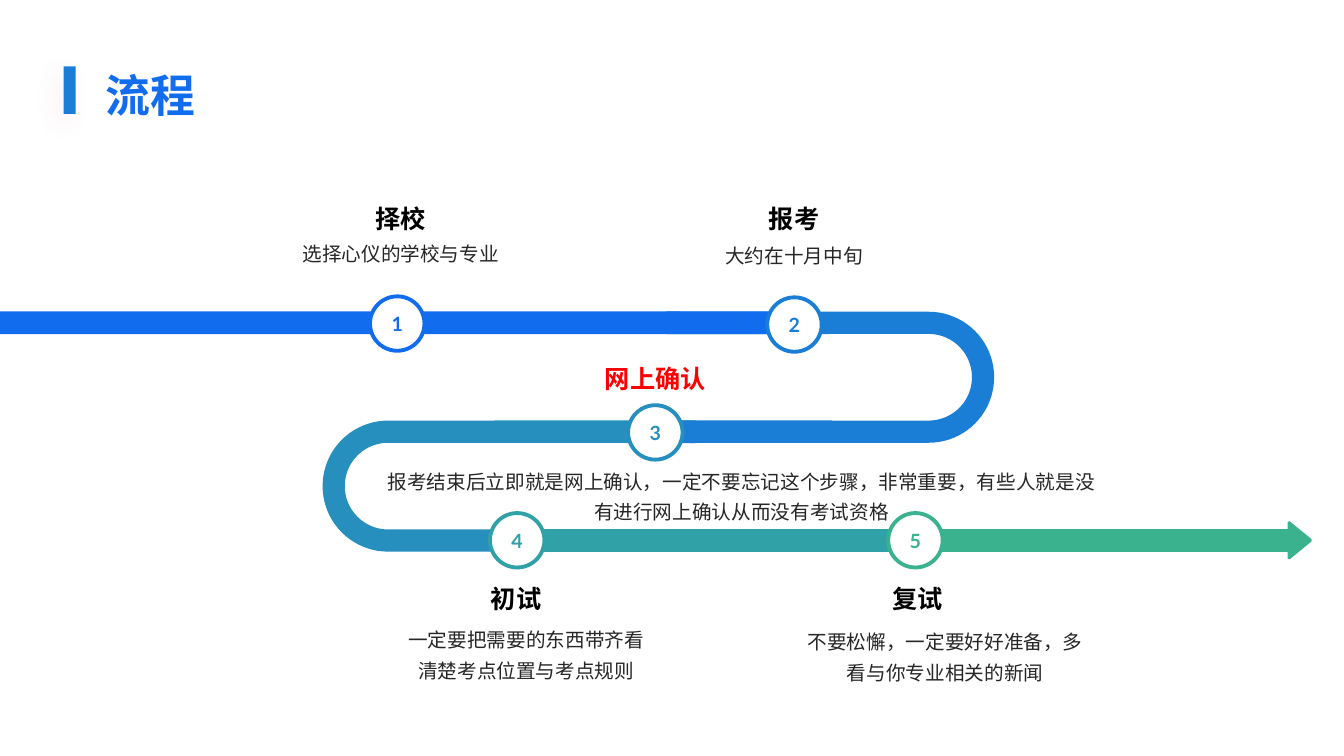
"""Builds a slide that shows an exam application process as a winding road."""
from math import cos, pi, sin

from lxml import etree
from pptx import Presentation
from pptx.dml.color import RGBColor
from pptx.enum.shapes import MSO_SHAPE
from pptx.enum.text import MSO_ANCHOR, PP_ALIGN
from pptx.oxml.ns import qn
from pptx.util import Inches, Pt

RECTANGLE, OVAL = MSO_SHAPE.RECTANGLE, MSO_SHAPE.OVAL
TOP, MIDDLE, BOTTOM = MSO_ANCHOR.TOP, MSO_ANCHOR.MIDDLE, MSO_ANCHOR.BOTTOM
LEFT, CENTER = PP_ALIGN.LEFT, PP_ALIGN.CENTER

BLUE = RGBColor(0x11, 0x6C, 0xEE)
AZURE = RGBColor(0x1B, 0x7E, 0xD6)
STEEL = RGBColor(0x26, 0x8F, 0xBE)
TEAL = RGBColor(0x30, 0xA1, 0xA6)
GREEN = RGBColor(0x3B, 0xB2, 0x8E)
PINK = RGBColor(0xFF, 0x5D, 0xA9)
RED = RGBColor(0xFF, 0x00, 0x00)
BLACK = RGBColor(0x00, 0x00, 0x00)
GRAY = RGBColor(0x26, 0x26, 0x26)
WHITE = RGBColor(0xFF, 0xFF, 0xFF)

FONT = "Lato"
ROAD = 0.225
LANES = (3.09, 4.17, 5.25)
OUTER, INNER = 0.65, 0.43
MARKER = 0.54

MARKERS = [
    (3.67, 2.94, BLUE),
    (7.61, 2.95, AZURE),
    (6.23, 4.02, STEEL),
    (4.86, 5.09, TEAL),
    (8.81, 5.09, GREEN),
]
HEADINGS = [
    ("择校", (2.83, 1.87, 2.29, 0.45), BLACK),
    ("报考", (6.73, 1.87, 2.29, 0.45), BLACK),
    ("网上确认", (5.5, 3.32, 2, 0.58), RED),
    ("初试", (4, 5.64, 2.24, 0.45), BLACK),
    ("复试", (7.98, 5.64, 2.24, 0.45), BLACK),
]
DETAILS = [
    ("选择心仪的学校与专业", (2.83, 2.33, 2.29, 0.6)),
    ("大约在十月中旬", (6.73, 2.35, 2.29, 0.6)),
    ("报考结束后立即就是网上确认，一定不要忘记这个步骤，非常重要，"
     "有些人就是没有进行网上确认从而没有考试资格", (3.77, 4.59, 7.17, 0.55)),
    ("一定要把需要的东西带齐看清楚考点位置与考点规则", (4, 6.16, 2.44, 0.6)),
    ("不要松懈，一定要好好准备，多看与你专业相关的新闻", (7.98, 6.18, 2.79, 0.6)),
]


def write(para, text, size, color, bold=False, align=CENTER):
    """Add one formatted run to a paragraph."""
    para.alignment = align
    span = para.add_run()
    span.text = text
    span.font.name = FONT
    span.font.size = Pt(size)
    span.font.bold = bold
    span.font.color.rgb = color


def paint(shape, color):
    """Give a shape a plain fill without line or shadow."""
    shape.shadow.inherit = False
    shape.fill.solid()
    shape.fill.fore_color.rgb = color
    shape.line.fill.background()


def add_block(page, left, top, width, height, color):
    """Add a filled rectangle."""
    block = page.shapes.add_shape(
        RECTANGLE, Inches(left), Inches(top), Inches(width), Inches(height))
    paint(block, color)
    return block


def add_outline(page, points, color):
    """Add a filled closed outline through points in inches."""
    corners = [(Inches(x), Inches(y)) for x, y in points]
    builder = page.shapes.build_freeform(*corners[0])
    builder.add_line_segments(corners[1:], close=True)
    paint(builder.convert_to_shape(), color)


def add_turn(page, lane, center_x, upper_end, lower_end, side, color):
    """Add a U-turn from one lane to the next; side is 1 for right, -1 for left."""
    top, bottom = LANES[lane], LANES[lane + 1] + ROAD
    center_y = (top + bottom) / 2
    angles = [pi * step / 40 - pi / 2 for step in range(41)]

    def arc(radius):
        return [(center_x + side * radius * cos(angle),
                 center_y + radius * sin(angle)) for angle in angles]

    points = [(upper_end, top), *arc(OUTER), (lower_end, bottom),
              (lower_end, bottom - ROAD), *reversed(arc(INNER)),
              (upper_end, top + ROAD)]
    add_outline(page, points, color)


def add_marker(page, number, left, top, color):
    """Add a numbered white circle with a coloured ring."""
    marker = page.shapes.add_shape(
        OVAL, Inches(left), Inches(top), Inches(MARKER), Inches(MARKER))
    paint(marker, WHITE)
    marker.line.color.rgb = color
    marker.line.width = Pt(2.75)
    frame = marker.text_frame
    frame.word_wrap = False
    frame.vertical_anchor = MIDDLE
    write(frame.paragraphs[0], str(number), 14, color, bold=True)


def add_label(page, area, anchor):
    """Add an empty wrapping text box without insets and return its paragraph."""
    frame = page.shapes.add_textbox(*map(Inches, area)).text_frame
    frame.word_wrap = True
    frame.vertical_anchor = anchor
    frame.margin_left = frame.margin_right = 0
    frame.margin_top = frame.margin_bottom = 0
    return frame.paragraphs[0]


def add_title(page, text):
    """Fill the title placeholder and set the accent bar with its soft shadow."""
    accent = add_block(page, 0.63, 0.66, 0.12, 0.47, AZURE)
    effects = accent.fill._xPr.find(qn("a:effectLst"))
    shadow = etree.SubElement(
        effects, qn("a:outerShdw"), blurRad=str(Pt(16)), dist=str(Pt(8)),
        dir=str(135 * 60000), rotWithShape="0")
    tint = etree.SubElement(shadow, qn("a:srgbClr"), val=str(PINK))
    etree.SubElement(tint, qn("a:alpha"), val="10000")

    title = page.shapes.title
    title.left, title.top = Inches(0.95), Inches(0.57)
    title.width, title.height = Inches(11.71), Inches(0.64)
    frame = title.text_frame
    frame.vertical_anchor = BOTTOM
    frame.margin_left = frame.margin_right = Inches(0.1)
    frame.margin_top = frame.margin_bottom = 0
    write(frame.paragraphs[0], text, 32, BLUE, bold=True, align=LEFT)


def add_road(page):
    """Draw the winding road from its end back to its start."""
    add_block(page, 9.22, LANES[2], 3.59, ROAD, GREEN)
    add_outline(page, [(12.77, 5.18), (12.79, 5.17), (13.01, 5.35),
                       (13.01, 5.37), (12.79, 5.55), (12.77, 5.54)], GREEN)
    add_turn(page, 1, 3.85, 6.9, 6.63, -1, STEEL)
    add_block(page, 5.39, LANES[2], 3.96, ROAD, TEAL)
    add_turn(page, 0, 9.21, 6.61, 6.44, 1, AZURE)
    add_block(page, 0, LANES[0], 7.88, ROAD, BLUE)


def main():
    """Build and save the slide."""
    deck = Presentation()
    deck.slide_width, deck.slide_height = Inches(13.33), Inches(7.5)
    page = deck.slides.add_slide(deck.slide_layouts[5])
    add_title(page, "流程")
    add_road(page)
    for number, (left, top, color) in enumerate(MARKERS, 1):
        add_marker(page, number, left, top, color)
    for text, area, color in HEADINGS:
        write(add_label(page, area, BOTTOM), text, 18, color, bold=True)
    for text, area in DETAILS:
        para = add_label(page, area, TOP)
        para.line_spacing = 1.3
        write(para, text, 14, GRAY)
    deck.save("out.pptx")


if __name__ == "__main__":
    main()
